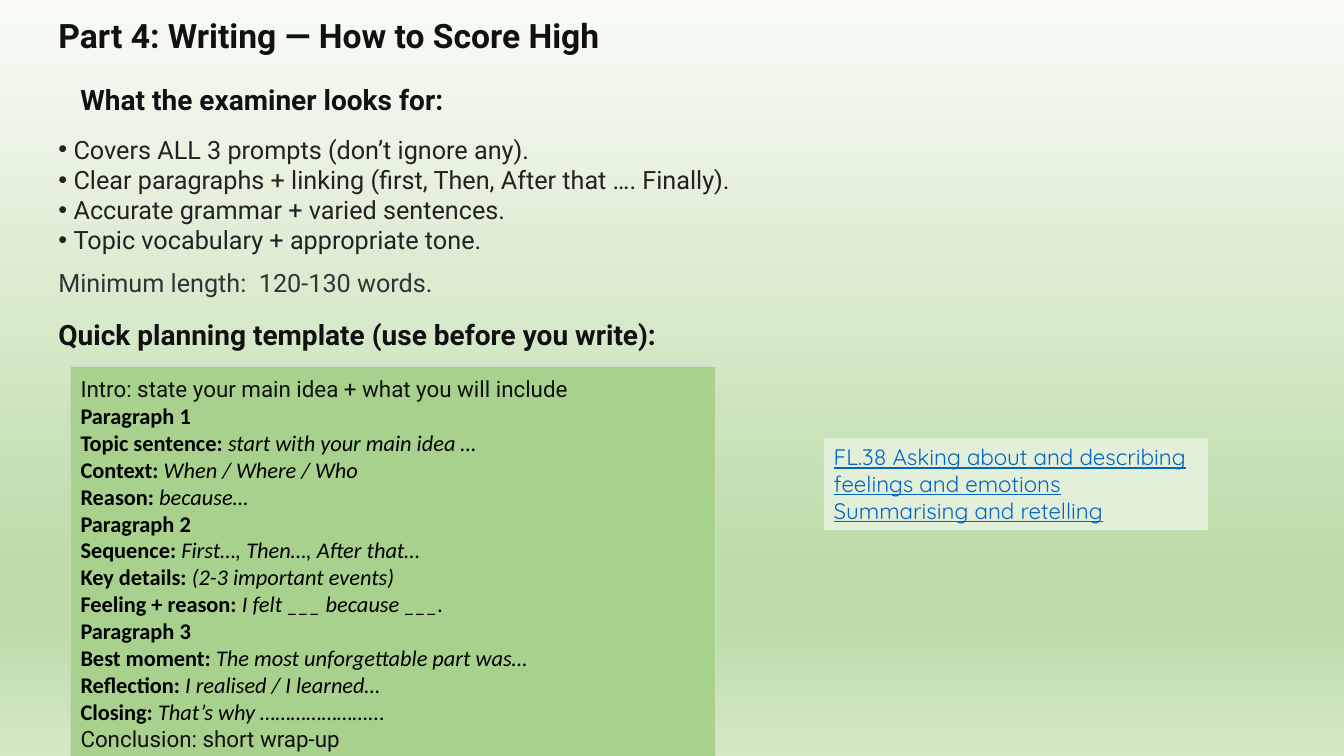
from copy import deepcopy

from pptx import Presentation
from pptx.dml.color import RGBColor as Rgb
from pptx.enum.shapes import MSO_SHAPE as Shape
from pptx.enum.text import MSO_ANCHOR as Anchor, MSO_AUTO_SIZE as Fit, PP_ALIGN as Align
from pptx.oxml.ns import qn
from pptx.oxml.xmlchemy import OxmlElement as Node
from pptx.util import Inches, Pt


def color(code):
    return Rgb.from_string(code)


class Deck:
    font = "Roboto"
    ink = "111111"

    def __init__(self):
        self.show = Presentation()
        self.show.slide_width = Inches(13.33)
        self.show.slide_height = Inches(7.5)
        self.slide = self.show.slides.add_slide(self.show.slide_layouts[1])

    def back(self, stops):
        fill = self.slide.background.fill
        fill.gradient()
        fill.gradient_angle = 270
        group = self.slide.element.find(".//" + qn("a:gsLst"))
        while len(group) < len(stops):
            group.append(deepcopy(group[0]))
        for stop, (place, code) in zip(fill.gradient_stops, stops):
            stop.position = place
            stop.color.rgb = color(code)

    def place(self, shape, at):
        shape.left, shape.top, shape.width, shape.height = map(Inches, at)
        return shape

    def run(self, para, text, size, code=None, font=None, bold=False, slant=False, under=False):
        run = para.add_run()
        run.text = text
        face = run.font
        face.name = font or self.font
        face.size = Pt(size)
        face.color.rgb = color(code or self.ink)
        face.bold, face.italic, face.underline = bold, slant, under

    def paras(self, shape, count, anchor=Anchor.MIDDLE):
        frame = shape.text_frame
        frame.word_wrap = True
        frame.auto_size = Fit.NONE
        frame.vertical_anchor = anchor
        for i in range(count):
            para = frame.paragraphs[0] if i == 0 else frame.add_paragraph()
            para.alignment = Align.LEFT
            para.space_before = Pt(0)
            yield para

    def title(self, at, text):
        for para in self.paras(self.place(self.slide.shapes.title, at), 1):
            self.run(para, text, 24, bold=True)

    def list(self, at, items):
        body = self.place(self.slide.placeholders[1], at)
        for para, text in zip(self.paras(body, len(items)), items):
            props = para._p.get_or_add_pPr()
            props.set("marL", str(Inches(0.15)))
            props.set("indent", str(-Inches(0.15)))
            mark = Node("a:buChar")
            mark.set("char", "•")
            props.append(mark)
            self.run(para, text, 18, "222222")

    def label(self, at, text, size, code=None, bold=False):
        box = self.slide.shapes.add_textbox(*map(Inches, at))
        for para in self.paras(box, 1):
            self.run(para, text, size, code, bold=bold)

    def panel(self, at, fill, line=None):
        shape = self.slide.shapes.add_shape(Shape.RECTANGLE, *map(Inches, at))
        shape.shadow.inherit = False
        shape.fill.solid()
        shape.fill.fore_color.rgb = color(fill)
        if line:
            shape.line.color.rgb = color(line)
            shape.line.width = Pt(1)
        else:
            shape.line.fill.background()
        return shape

    def plan(self, at, intro, rows, end):
        self.panel((*at[:3], 3.86), "F7F7F7", "DDDDDD")
        paras = self.paras(self.panel(at, "A9D18E"), len(rows) + 2)
        self.run(next(paras), intro, 16)
        for head, hint in rows:
            para = next(paras)
            self.run(para, head, 16, "000000", "Calibri", bold=True)
            if hint:
                self.run(para, " " + hint, 16, "000000", "Calibri", slant=True)
        self.run(next(paras), end, 16)

    def links(self, at, items):
        box = self.panel(at, "E2F0D9")
        for para, text in zip(self.paras(box, len(items), Anchor.TOP), items):
            self.run(para, text, 16, "0563C1", "Quicksand", under=True)


def main():
    deck = Deck()
    deck.back([(0, "F8FBF6"), (0.74, "BEDCAA"), (0.83, "BEDCAA"), (1, "D4E8C6")])
    deck.title((0.48, 0, 12.1, 0.7), "Part 4: Writing — How to Score High")
    deck.label((0.7, 0.84, 11.5, 0.3), "What the examiner looks for:", 20, bold=True)
    deck.list((0.48, 1.28, 7.94, 1.3), [
        "Covers ALL 3 prompts (don’t ignore any).",
        "Clear paragraphs + linking (first, Then, After that …. Finally).",
        "Accurate grammar + varied sentences.",
        "Topic vocabulary + appropriate tone.",
    ])
    deck.label((0.48, 2.6, 11.5, 0.4), "Minimum length:  120-130 words.", 18, "333333")
    deck.label((0.48, 3.17, 12.1, 0.3),
               "Quick planning template (use before you write):", 20, bold=True)
    deck.plan((0.7, 3.64, 6.39, 3.9), "Intro: state your main idea + what you will include", [
        ("Paragraph 1", ""),
        ("Topic sentence:", "start with your main idea …"),
        ("Context:", "When / Where / Who"),
        ("Reason:", "because…"),
        ("Paragraph 2", ""),
        ("Sequence:", "First…, Then…, After that…"),
        ("Key details:", "(2-3 important events)"),
        ("Feeling + reason:", "I felt ___ because ___."),
        ("Paragraph 3", ""),
        ("Best moment:", "The most unforgettable part was…"),
        ("Reflection:", "I realised / I learned…"),
        ("Closing:", "That’s why …………………..."),
    ], "Conclusion: short wrap‑up")
    deck.links((8.17, 4.35, 3.81, 0.91), [
        "FL.38 Asking about and describing feelings and emotions",
        "Summarising and retelling",
    ])
    deck.show.save("out.pptx")


if __name__ == "__main__":
    main()
